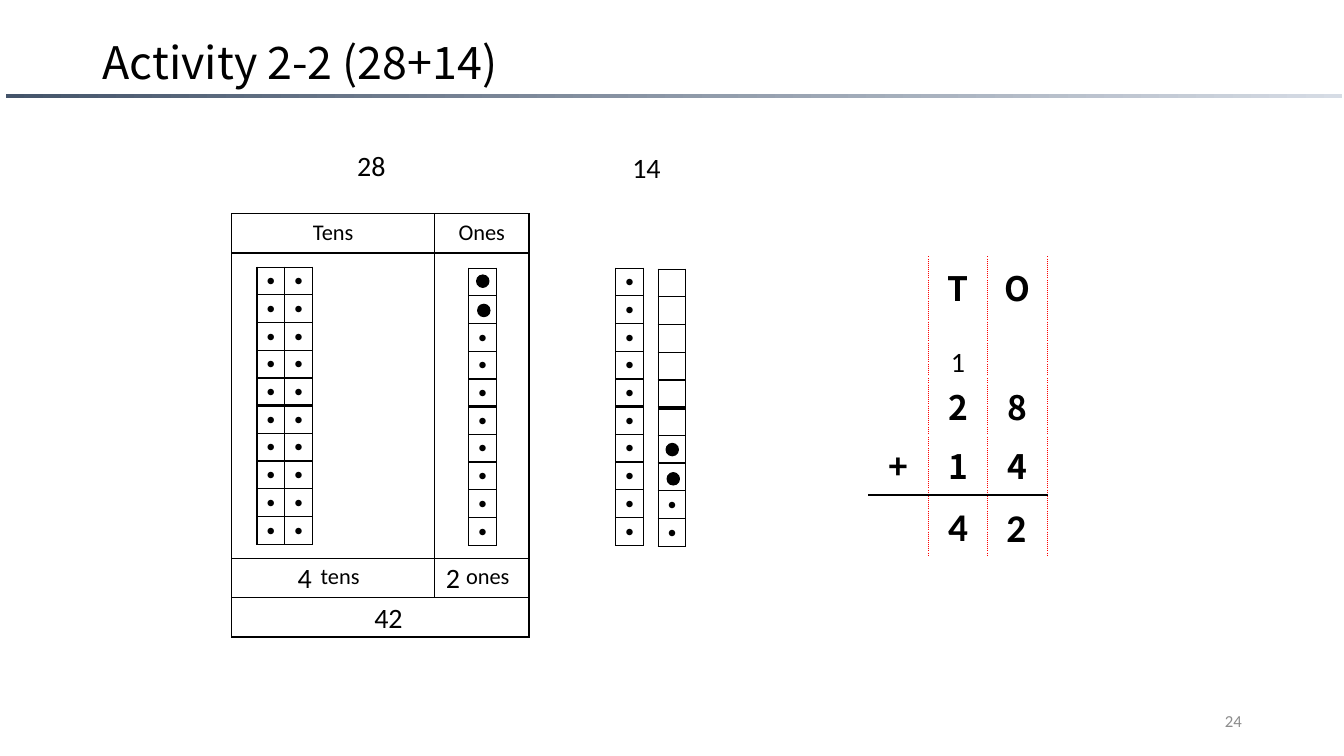
from dataclasses import dataclass
from lxml import etree
from pptx import Presentation
from pptx.dml.color import RGBColor
from pptx.enum.shapes import MSO_SHAPE
from pptx.enum.text import MSO_ANCHOR, PP_ALIGN
from pptx.oxml.ns import qn
from pptx.table import Table, _Cell
from pptx.text.text import TextFrame
from pptx.util import Emu, Pt

RECT, OVAL = MSO_SHAPE.RECTANGLE, MSO_SHAPE.OVAL
TOP, MID = MSO_ANCHOR.TOP, MSO_ANCHOR.MIDDLE
LEFT, CENTER, RIGHT = PP_ALIGN.LEFT, PP_ALIGN.CENTER, PP_ALIGN.RIGHT
SCALE = 4572
SANS, NOTO = "Calibri", "Noto Sans CJK JP"
BLACK, RED, GREY = "000000", "FF0000", "8C8C8C"
ROWS = 10
SIDE = 55
DOT = 24


@dataclass
class Label:
    text: str
    left: int
    top: int
    width: int = 126
    height: int = 88
    size: int = 20
    bold: bool = False
    font: str = SANS
    color: str = BLACK
    align: PP_ALIGN = CENTER
    anchor: MSO_ANCHOR = TOP


@dataclass
class Strip:
    left: int
    top: int
    cols: int
    first: int


@dataclass
class Edge:
    side: str
    color: str = BLACK
    width: float = 1
    dash: str = "solid"


LABELS = [
    Label("Activity 2-2 (28+14)", 184, 80, 2300, 98, 32, font=NOTO, align=LEFT, anchor=MID),
    Label("24", 1884, 1390, 600, 80, 12, color=GREY, align=RIGHT, anchor=MID),
    Label("14", 1220, 288),
    Label("28", 674, 284),
    Label("4", 542, 1102),
    Label("2", 836, 1102),
    Label("42", 708, 1182),
    Label("2", 1954, 988, height=114, size=28, bold=True),
    Label("1", 1838, 674),
    Label("4", 1838, 986, height=114, size=28, bold=True),
]
STRIPS = [
    Strip(510, 530, 2, 0),
    Strip(930, 532, 1, 2),
    Strip(1222, 532, 1, 0),
    Strip(1306, 534, 1, 8),
]
PAIRS = [(1322, 880), (946, 546)]
SUM = ["_TO", "___", "_28", "+14", "___"]
CHART = [("Tens", "Ones"), ("", ""), ("tens", "ones"), ("", "")]


def px(num: int) -> Emu:
    return Emu(num * SCALE)


def rgb(code: str) -> RGBColor:
    return RGBColor.from_string(code)


def write(frame: TextFrame, text: str, size: int, font: str = SANS,
          bold: bool = False, color: str = BLACK, align: PP_ALIGN = CENTER) -> None:
    para = frame.paragraphs[0]
    para.text = text
    para.alignment = align
    para.font.size = Pt(size)
    para.font.name = font
    para.font.bold = bold
    para.font.color.rgb = rgb(color)


def edge_cell(cell: _Cell, edges: list[Edge]) -> None:
    props = cell._tc.get_or_add_tcPr()
    for edge in sorted(edges, key=lambda item: "LRTB".index(item.side)):
        line = etree.SubElement(props, qn("a:ln" + edge.side), w=str(Pt(edge.width)))
        fill = etree.SubElement(line, qn("a:solidFill"))
        etree.SubElement(fill, qn("a:srgbClr"), val=edge.color)
        etree.SubElement(line, qn("a:prstDash"), val=edge.dash)
    cell.fill.background()


def add_grid(shapes, left: int, top: int, cols: list[int], rows: list[int]) -> Table:
    table = shapes.add_table(len(rows), len(cols), px(left), px(top),
                             px(sum(cols)), px(sum(rows))).table
    table.first_row = table.horz_banding = False
    for col, width in zip(table.columns, cols):
        col.width = px(width)
    for row, height in zip(table.rows, rows):
        row.height = px(height)
    return table


def add_label(shapes, label: Label) -> None:
    box = shapes.add_textbox(px(label.left), px(label.top), px(label.width), px(label.height))
    frame = box.text_frame
    frame.word_wrap = True
    frame.vertical_anchor = label.anchor
    write(frame, label.text, label.size, label.font, label.bold, label.color, label.align)
    if label.font == NOTO:
        frame.paragraphs[0].line_spacing = 0.9


def add_strip(shapes, strip: Strip) -> None:
    table = add_grid(shapes, strip.left, strip.top, [SIDE] * strip.cols, [SIDE] * ROWS)
    half = ROWS // 2
    for row in range(ROWS):
        for col in range(strip.cols):
            cell = table.cell(row, col)
            cell.vertical_anchor = MID
            cell.margin_left = cell.margin_right = 0
            write(cell.text_frame, "●" if row >= strip.first else "", 10)
            edge_cell(cell, [Edge("L"), Edge("R"),
                             Edge("T", width=3 if row == half else 1),
                             Edge("B", width=3 if row == half - 1 else 1)])


def add_sum(shapes) -> None:
    table = add_grid(shapes, 1724, 510, [118] * 3, [118] * 5)
    for row, signs in enumerate(SUM):
        for col, sign in enumerate(signs):
            cell = table.cell(row, col)
            cell.vertical_anchor = MID
            write(cell.text_frame, sign.strip("_"), 24, NOTO, True)
            edges = [Edge(side, RED, 1, "sysDot") for side in ("LR" if col else "R")]
            if row == 3:
                edges.append(Edge("B", width=1.5))
            if row == 4:
                edges.append(Edge("T", width=1.5))
            edge_cell(cell, edges)


def add_chart(shapes) -> None:
    table = add_grid(shapes, 460, 424, [402, 188], [78, 606, 78, 78])
    for row, words in enumerate(CHART):
        for col, word in enumerate(words):
            cell = table.cell(row, col)
            cell.margin_left = cell.margin_right = px(10)
            cell.margin_top = cell.margin_bottom = px(10)
            if row == 2:
                cell.margin_left = px(38 - 4 * col)
            write(cell.text_frame, word, 16)
            edge_cell(cell, [Edge(side) for side in "LRTB"])
    table.cell(3, 0).merge(table.cell(3, 1))


def add_bar(shapes) -> None:
    bar = shapes.add_shape(RECT, px(12), px(186), px(2652), px(8))
    bar.shadow.inherit = False
    bar.line.fill.background()
    bar.fill.gradient()
    bar.fill.gradient_angle = 0
    for stop, code in zip(bar.fill.gradient_stops, ("44546A", "D6DCE5")):
        stop.color.rgb = rgb(code)


def add_pair(shapes, left: int, top: int) -> None:
    group = shapes.add_group_shape()
    for step in range(2):
        dot = group.shapes.add_shape(OVAL, px(left + 2 * step), px(top + 58 * step),
                                     px(DOT), px(DOT))
        dot.shadow.inherit = False
        dot.fill.solid()
        dot.fill.fore_color.rgb = rgb(BLACK)
        dot.line.color.rgb = rgb(BLACK)
        dot.line.width = Pt(1)


def main() -> None:
    deck = Presentation()
    deck.slide_width, deck.slide_height = px(2667), px(1500)
    shapes = deck.slides.add_slide(deck.slide_layouts[6]).shapes
    add_bar(shapes)
    add_sum(shapes)
    add_chart(shapes)
    for strip in STRIPS:
        add_strip(shapes, strip)
    for left, top in PAIRS:
        add_pair(shapes, left, top)
    for label in LABELS:
        add_label(shapes, label)
    deck.save("out.pptx")


if __name__ == "__main__":
    main()
